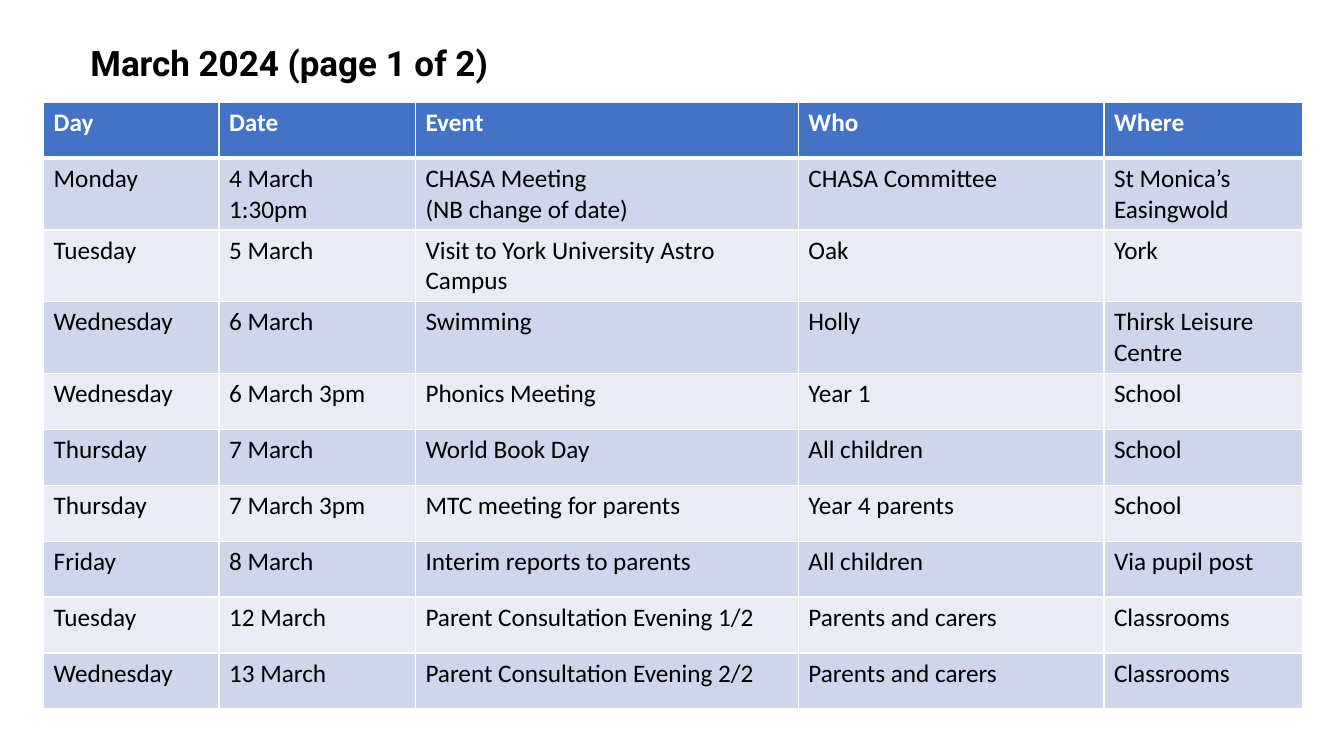
from lxml import etree
from pptx import Presentation
from pptx.dml.color import RGBColor
from pptx.enum.text import MSO_AUTO_SIZE
from pptx.oxml.ns import qn
from pptx.util import Cm, Pt

FIT_SHAPE = MSO_AUTO_SIZE.SHAPE_TO_FIT_TEXT
BLANK_LAYOUT = 6

BLACK = RGBColor(0x00, 0x00, 0x00)
WHITE = RGBColor(0xFF, 0xFF, 0xFF)
HEADER_BLUE = RGBColor(0x44, 0x72, 0xC4)
BAND_DARK = RGBColor(0xCF, 0xD5, 0xEA)
BAND_LIGHT = RGBColor(0xE9, 0xEB, 0xF5)

COLUMN_WIDTHS = [4.42, 4.95, 9.65, 7.7, 5.0]
ROW_HEIGHT = 1.41
HEADINGS = ["Day", "Date", "Event", "Who", "Where"]
EVENTS = [
    ["Monday", "4 March\n1:30pm", "CHASA Meeting\n(NB change of date)",
     "CHASA Committee", "St Monica’s Easingwold"],
    ["Tuesday", "5 March", "Visit to York University Astro Campus", "Oak", "York"],
    ["Wednesday", "6 March", "Swimming", "Holly", "Thirsk Leisure Centre"],
    ["Wednesday", "6 March 3pm", "Phonics Meeting", "Year 1", "School"],
    ["Thursday", "7 March", "World Book Day", "All children", "School"],
    ["Thursday", "7 March 3pm", "MTC meeting for parents", "Year 4 parents", "School"],
    ["Friday", "8 March", "Interim reports to parents", "All children", "Via pupil post"],
    ["Tuesday", "12 March", "Parent Consultation Evening 1/2",
     "Parents and carers", "Classrooms"],
    ["Wednesday", "13 March", "Parent Consultation Evening 2/2",
     "Parents and carers", "Classrooms"],
]


class CalendarSlide:
    """Holds the slide and its text styles."""

    title_font, title_size = "Roboto", 25
    table_font, table_size = "Calibri", 18

    def __init__(self, presentation):
        layout = presentation.slide_layouts[BLANK_LAYOUT]
        self.slide = presentation.slides.add_slide(layout)

    def set_text(self, text_frame, text, font_name, size, color, bold):
        text_frame.text = text
        for paragraph in text_frame.paragraphs:
            for run in paragraph.runs:
                run.font.name = font_name
                run.font.size = Pt(size)
                run.font.color.rgb = color
                run.font.bold = bold

    def title(self, text, left, top, width, height):
        shape = self.slide.shapes.add_textbox(Cm(left), Cm(top), Cm(width), Cm(height))
        shape.text_frame.word_wrap = True
        shape.text_frame.auto_size = FIT_SHAPE
        self.set_text(shape.text_frame, text, self.title_font, self.title_size, BLACK, True)

    def borders(self, cell, top, bottom):
        properties = cell._tc.get_or_add_tcPr()
        widths = {"a:lnL": 1, "a:lnR": 1, "a:lnT": top, "a:lnB": bottom}
        # Border lines come before the fill in the cell properties
        for position, (tag, width) in enumerate(widths.items()):
            line = etree.Element(qn(tag), w=str(Pt(width)))
            fill = etree.SubElement(line, qn("a:solidFill"))
            etree.SubElement(fill, qn("a:srgbClr"), val=str(WHITE))
            properties.insert(position, line)

    def table(self, rows, left, top, column_widths, row_height):
        frame = self.slide.shapes.add_table(
            len(rows), len(column_widths), Cm(left), Cm(top),
            Cm(sum(column_widths)), Cm(row_height * len(rows)))
        table = frame.table
        for column, width in zip(table.columns, column_widths):
            column.width = Cm(width)
        for row_index, texts in enumerate(rows):
            table.rows[row_index].height = Cm(row_height)
            header = row_index == 0
            band = BAND_DARK if row_index % 2 else BAND_LIGHT
            for column_index, text in enumerate(texts):
                cell = table.cell(row_index, column_index)
                cell.fill.solid()
                cell.fill.fore_color.rgb = HEADER_BLUE if header else band
                self.set_text(cell.text_frame, text, self.table_font, self.table_size,
                              WHITE if header else BLACK, header)
                self.borders(cell, top=3 if row_index == 1 else 1,
                             bottom=3 if header else 1)


def main():
    presentation = Presentation()
    presentation.slide_width = Cm(33.87)
    presentation.slide_height = Cm(19.05)
    calendar = CalendarSlide(presentation)

    # Events table
    calendar.table([HEADINGS] + EVENTS, 1.1, 2.58, COLUMN_WIDTHS, ROW_HEIGHT)

    # Month heading
    calendar.title("March 2024 (page 1 of 2)", 2.03, 0.92, 11.3, 1.32)

    presentation.save("out.pptx")


if __name__ == "__main__":
    main()
